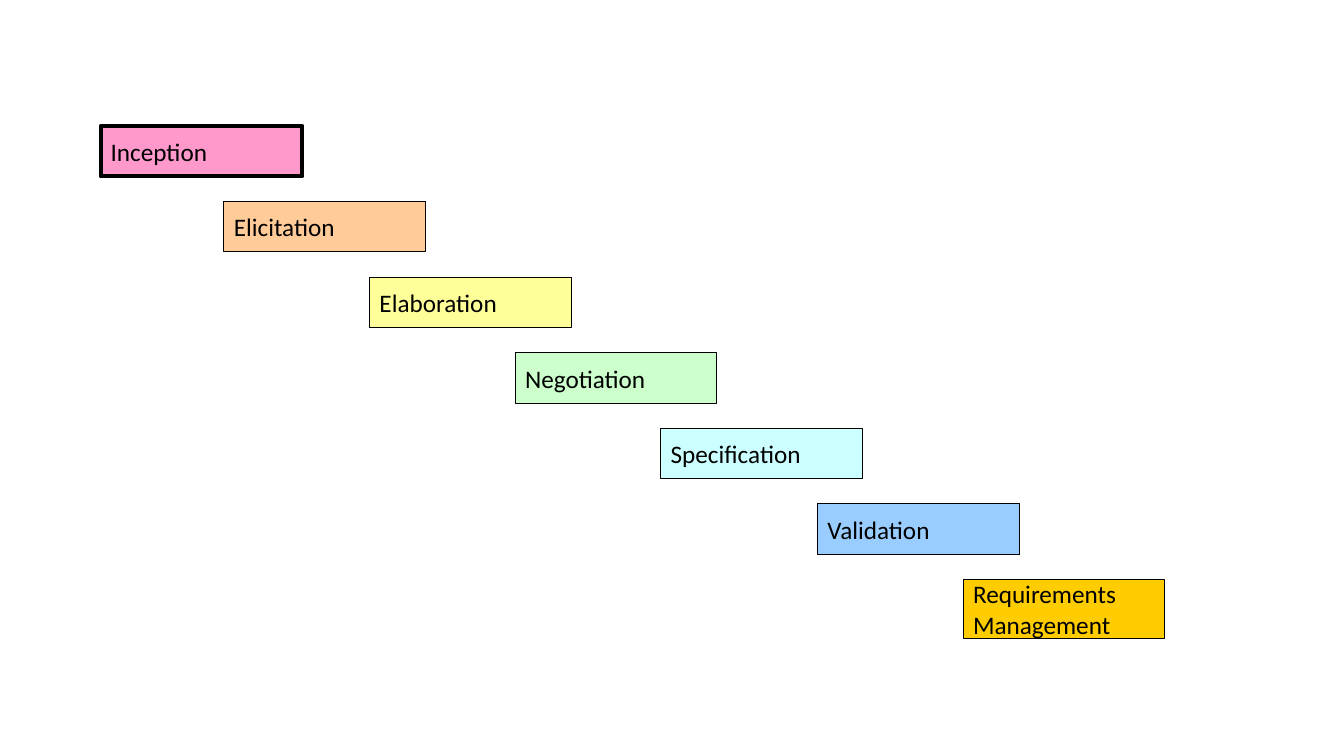
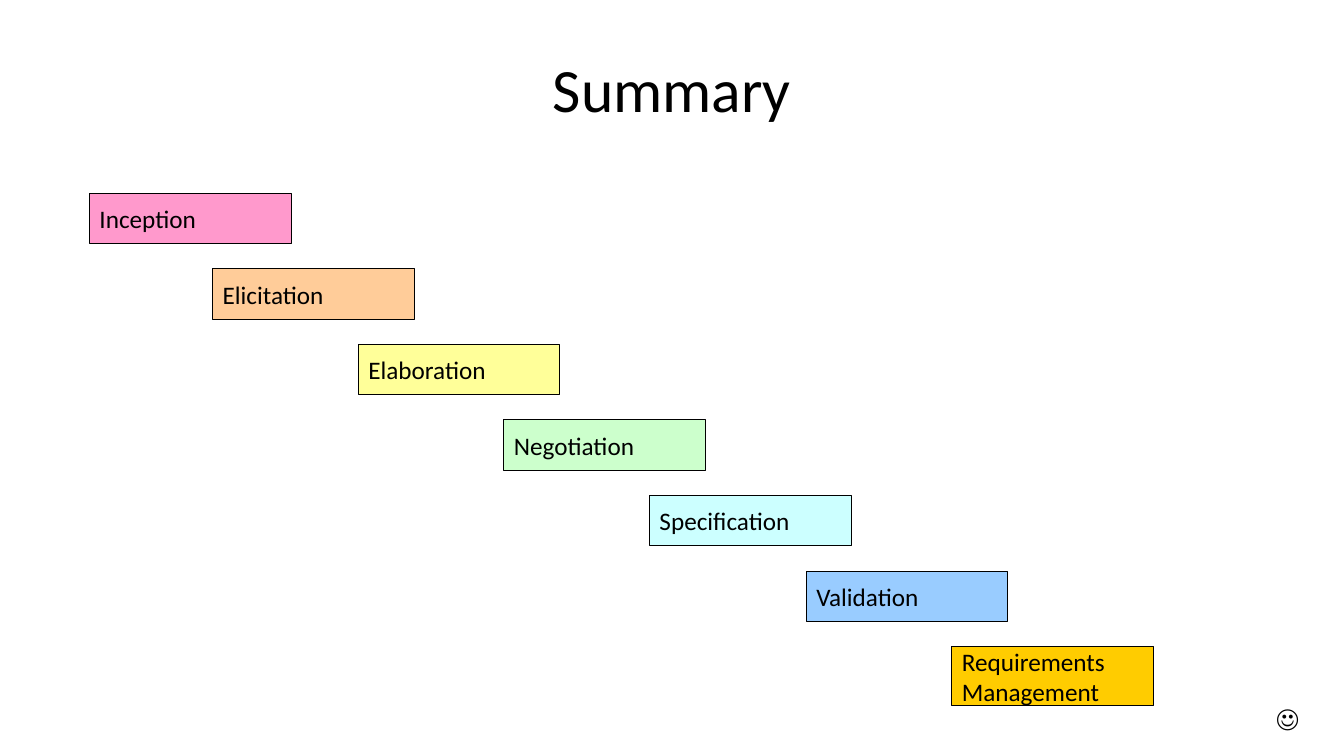
from pptx import Presentation
from pptx.dml.color import RGBColor
from pptx.enum import shapes, text
from pptx.util import Emu, Pt

PX = 6350  # EMU per px, on a 1920 x 1080 slide
FONT = "Calibri"
BLACK = RGBColor(0x00, 0x00, 0x00)
PINK = RGBColor(0xFF, 0x99, 0xCC)
ORANGE = RGBColor(0xFF, 0xCC, 0x99)
YELLOW = RGBColor(0xFF, 0xFF, 0x99)
GREEN = RGBColor(0xCC, 0xFF, 0xCC)
CYAN = RGBColor(0xCC, 0xFF, 0xFF)
BLUE = RGBColor(0x99, 0xCC, 0xFF)
GOLD = RGBColor(0xFF, 0xCC, 0x00)

# Each task: lines of its label, fill, distance from the left of the staircase
TASKS = [
    (["Inception"], PINK, 0),
    (["Elicitation"], ORANGE, 176),
    (["Elaboration"], YELLOW, 384),
    (["Negotiation"], GREEN, 592),
    (["Specification"], CYAN, 800),
    (["Validation"], BLUE, 1024),
    (["Requirements", "Management"], GOLD, 1232),
]
STEP_WIDTH, STEP_DROP = 288, 108
STEP_HEIGHTS = {1: 72, 2: 84}  # by number of label lines


def px(*lengths):
    return [Emu(length * PX) for length in lengths]


def write(shape, lines, size=18, align=text.PP_ALIGN.LEFT,
          anchor=text.MSO_ANCHOR.MIDDLE, wrap=False):
    frame = shape.text_frame
    frame.word_wrap = wrap
    frame.vertical_anchor = anchor
    for index, line in enumerate(lines):
        paragraph = frame.add_paragraph() if index else frame.paragraphs[0]
        paragraph.alignment = align
        run = paragraph.add_run()
        run.text = line
        run.font.name = FONT
        run.font.size = Pt(size)
        run.font.color.rgb = BLACK


def add_title(slide, title, left, top, width, height):
    shape = slide.shapes.add_textbox(*px(left, top, width, height))
    write(shape, [title], size=44, align=text.PP_ALIGN.CENTER, wrap=True)


def add_staircase(slide, left, top, current=None):
    """Place the tasks as steps down from (left, top); outline the current one."""
    for index, (lines, fill, offset) in enumerate(TASKS):
        step = slide.shapes.add_shape(
            shapes.MSO_SHAPE.RECTANGLE,
            *px(left + offset, top + index * STEP_DROP,
                STEP_WIDTH, STEP_HEIGHTS[len(lines)]))
        step.shadow.inherit = False
        step.fill.solid()
        step.fill.fore_color.rgb = fill
        step.line.color.rgb = BLACK
        step.line.width = Pt(3 if index == current else 0.75)
        write(step, lines)


def add_end_mark(slide, left, top, width, height):
    shape = slide.shapes.add_textbox(*px(left, top, width, height))
    write(shape, ["☺"], anchor=text.MSO_ANCHOR.TOP)
    shape.text_frame.auto_size = text.MSO_AUTO_SIZE.SHAPE_TO_FIT_TEXT


def main():
    presentation = Presentation()
    presentation.slide_width, presentation.slide_height = px(1920, 1080)
    blank = presentation.slide_layouts[6]

    # Current task: inception
    slide = presentation.slides.add_slide(blank)
    add_staircase(slide, 144, 180, current=0)

    # Summary
    slide = presentation.slides.add_slide(blank)
    add_title(slide, "Summary", 144, 36, 1632, 180)
    add_staircase(slide, 128, 276)
    add_end_mark(slide, 1809, 996, 59, 58)

    presentation.save("out.pptx")


if __name__ == "__main__":
    main()
